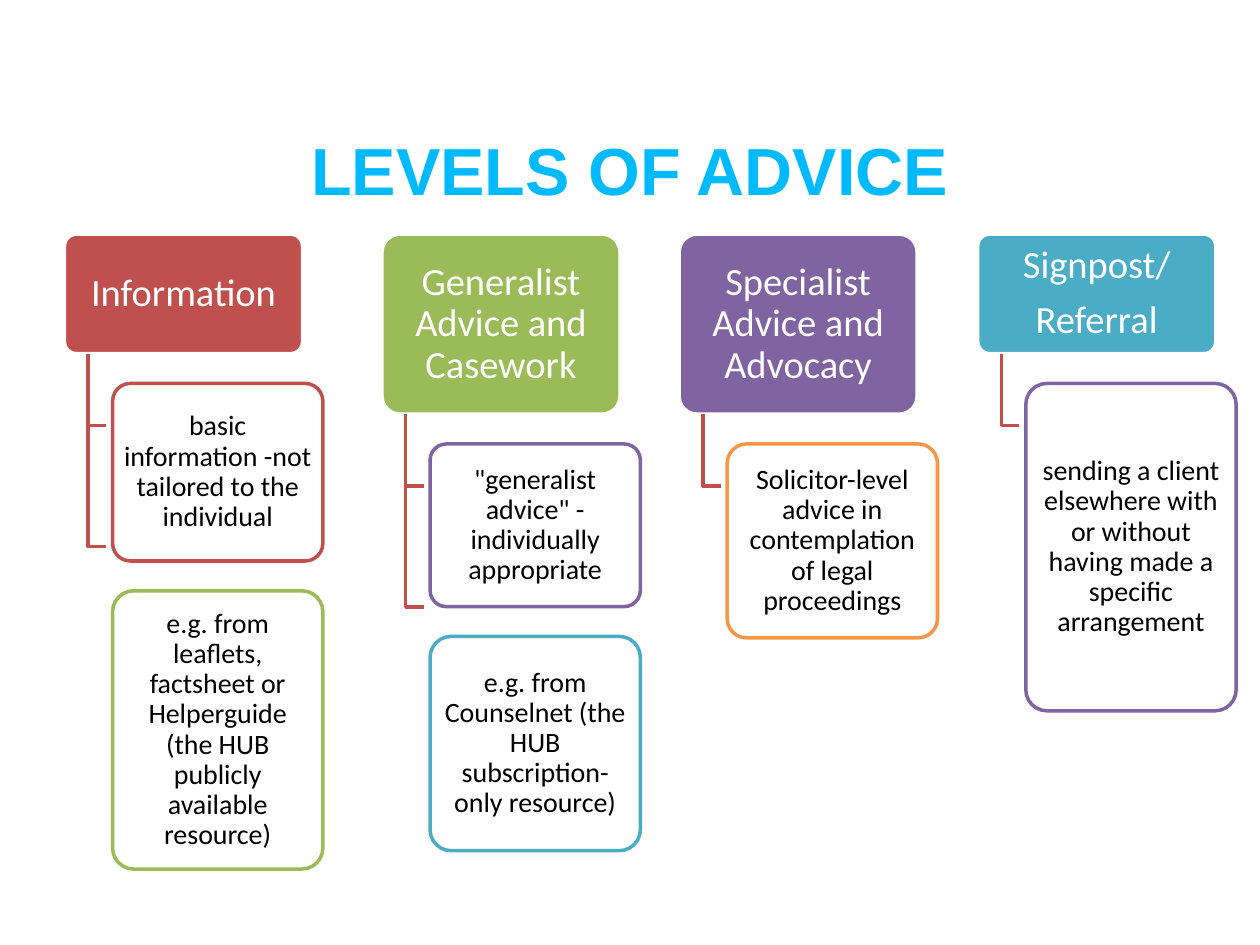
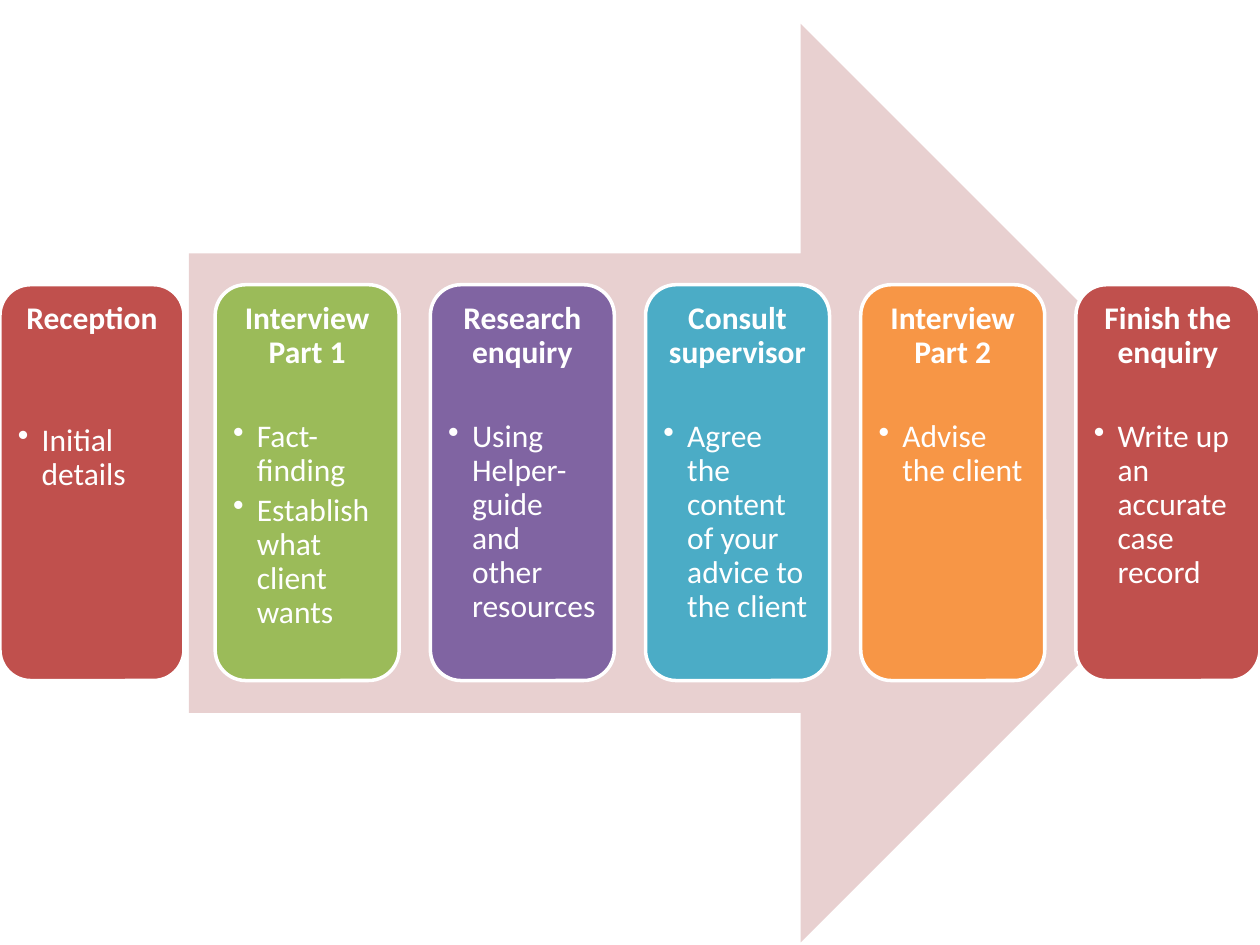
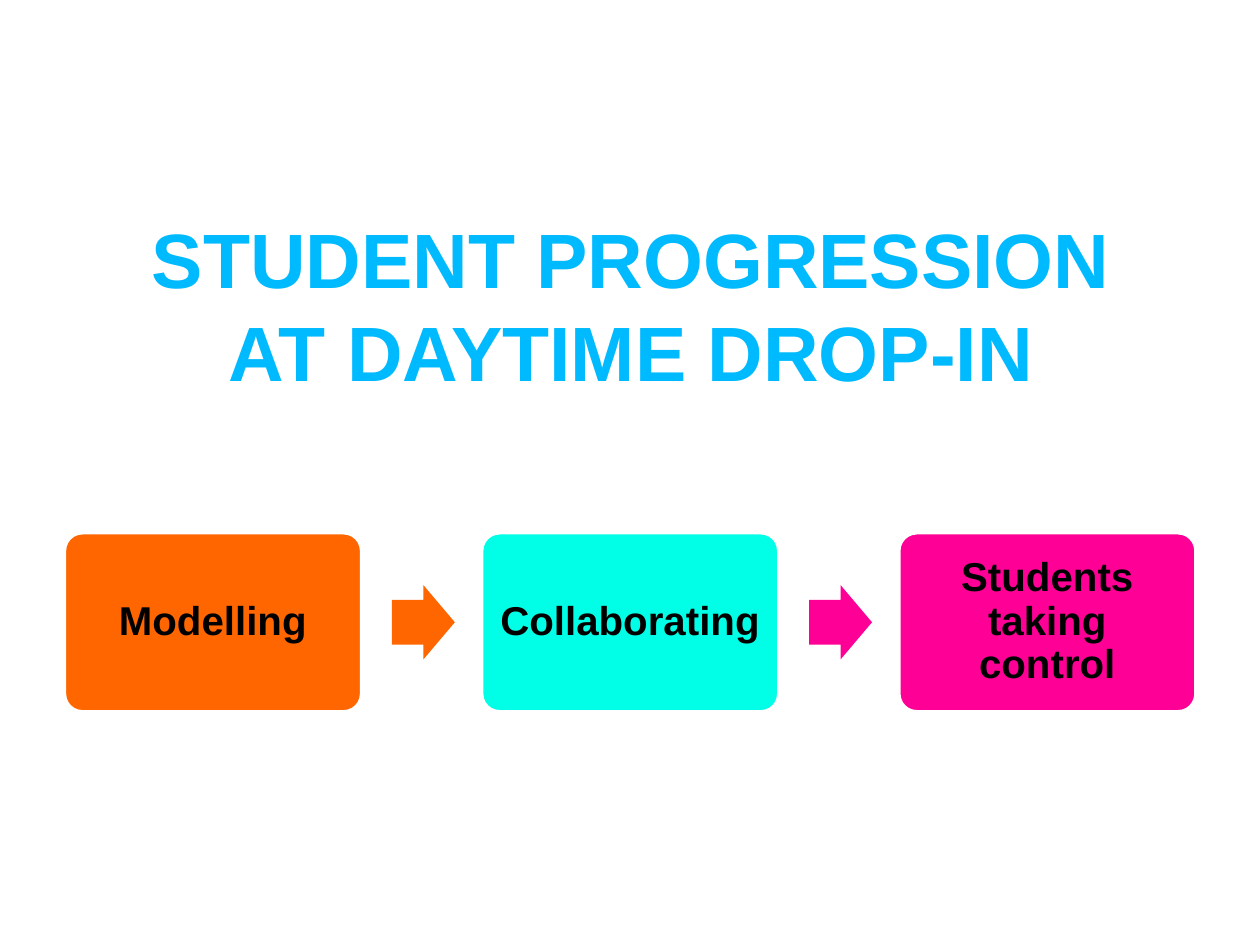
from dataclasses import dataclass
from lxml.etree import SubElement
from pptx import Presentation
from pptx.dml.color import RGBColor
from pptx.enum.shapes import MSO_SHAPE
from pptx.enum.text import MSO_ANCHOR, MSO_AUTO_SIZE, PP_ALIGN
from pptx.oxml.ns import qn
from pptx.util import Cm, Pt


@dataclass(frozen=True)
class Theme:
    red: str = "C0504D"
    green: str = "9BBB59"
    purple: str = "8064A2"
    teal: str = "4BACC6"
    amber: str = "F79646"
    rose: str = "E8D0D0"
    orange: str = "FF6600"
    aqua: str = "00FFE6"
    pink: str = "FF0097"
    sky: str = "00BAFF"
    white: str = "FFFFFF"
    black: str = "000000"
    head: str = "Arial"
    body: str = "Calibri"
    level: int = 22
    note: int = 16
    step: int = 18
    stage: int = 23
    line: int = 2


T = Theme()
WIDTH, HEIGHT = 25.4, 19.05

# left, header height, colour, header lines, notes as (text, colour, height)
LEVELS = [
    (1.3, 2.41, T.red, ["Information"], [
        ("basic information -not tailored to the individual", T.red, 3.58),
        ("e.g. from leaflets, factsheet or Helperguide (the HUB publicly "
         "available resource)", T.green, 5.61)]),
    (7.7, 3.63, T.green, ["Generalist Advice and Casework"], [
        ('"generalist advice" - individually appropriate', T.purple, 3.28),
        ("e.g. from Counselnet (the HUB subscription-only resource)",
         T.teal, 4.32)]),
    (13.69, 3.63, T.purple, ["Specialist Advice and Advocacy"], [
        ("Solicitor-level advice in contemplation of legal proceedings",
         T.amber, 3.91)]),
    (19.71, 2.41, T.teal, ["Signpost/", "Referral"], [
        ("sending a client elsewhere with or without having made a specific "
         "arrangement", T.purple, 6.6)]),
]

# heading, colour, points between heading and bullets, bullets
STEPS = [
    ("Reception", T.red, 50, ["Initial details"]),
    ("Interview Part 1", T.green, 28.5,
     ["Fact-finding", "Establish what client wants"]),
    ("Research enquiry", T.purple, 28.5,
     ["Using Helper-guide and other resources"]),
    ("Consult supervisor", T.teal, 28.5,
     ["Agree the content of your advice to the client"]),
    ("Interview Part 2", T.amber, 28.5, ["Advise the client"]),
    ("Finish the enquiry", T.red, 28.5, ["Write up an accurate case record"]),
]

STAGES = [
    ("Modelling", T.orange),
    ("Collaborating", T.aqua),
    ("Students taking\vcontrol", T.pink),
]


def rgb(code):
    return RGBColor.from_string(code)


def write(shape, text, size=T.step, color=T.white, font=T.body, bold=False,
          align=PP_ALIGN.CENTER, lead=0.9, gap=0, bullet=False):
    """Add one paragraph to a shape; gap is the space before it in points."""
    frame = shape.text_frame
    para = frame.add_paragraph() if frame.text else frame.paragraphs[0]
    para.text = text
    if bullet:
        props = para._p.get_or_add_pPr()
        props.set("marL", str(Cm(0.48)))
        props.set("indent", str(-Cm(0.48)))
        SubElement(props, qn("a:buChar")).set("char", "•")
    para.alignment = align
    para.line_spacing = lead
    if gap:
        para.space_before = Pt(gap)
    for run in para.runs:
        run.font.size, run.font.bold, run.font.name = Pt(size), bold, font
        run.font.color.rgb = rgb(color)


def draw(slide, kind, box, fill, line=None, adjust=(), pad=(0, 0),
         anchor=MSO_ANCHOR.MIDDLE):
    shape = slide.shapes.add_shape(kind, *map(Cm, box))
    shape.shadow.inherit = False
    for i, value in enumerate(adjust):
        shape.adjustments[i] = value
    shape.fill.solid()
    shape.fill.fore_color.rgb = rgb(fill)
    if line:
        shape.line.color.rgb = rgb(line)
        shape.line.width = Pt(T.line)
    else:
        shape.line.fill.background()
    frame = shape.text_frame
    frame.word_wrap = True
    frame.vertical_anchor = anchor
    frame.margin_left = frame.margin_right = Cm(pad[0])
    frame.margin_top = frame.margin_bottom = Cm(pad[1])
    return shape


def card(slide, box, fill, line=T.white, adjust=(0.1,), **more):
    return draw(slide, MSO_SHAPE.ROUNDED_RECTANGLE, box, fill, line, adjust,
                **more)


def elbow(slide, x, y, drop):
    """Draw a branch that falls from a header and turns right to a note."""
    path = slide.shapes.build_freeform(Cm(x), Cm(y))
    path.add_line_segments([(Cm(x), Cm(y + drop)),
                            (Cm(x + 0.36), Cm(y + drop))], close=False)
    branch = path.convert_to_shape()
    branch.shadow.inherit = False
    branch.fill.background()
    branch.line.color.rgb = rgb(T.red)
    branch.line.width = Pt(T.line)


def head(slide, text, box, size):
    title = slide.shapes.title
    title.left, title.top, title.width, title.height = map(Cm, box)
    title.text_frame.auto_size = MSO_AUTO_SIZE.NONE
    title.text_frame.vertical_anchor = MSO_ANCHOR.MIDDLE
    write(title, text, size, T.sky, T.head, True, lead=1.0)


def levels(slide):
    head(slide, "LEVELS OF ADVICE", (0, 2.13, WIDTH, 2.57), 38)
    top, gap = 4.72, 0.6
    for left, high, color, lines, notes in LEVELS:
        box = card(slide, (left, top, 4.8, high), color, pad=(0.13, 0.08))
        for i, text in enumerate(lines):
            write(box, text, T.level, gap=7.7 * (i > 0))
        base = top + high
        y = base + gap
        for i, (text, edge, tall) in enumerate(notes):
            elbow(slide, left + 0.48, base, 1.45 + 2.44 * i)
            note = card(slide, (left + 0.97, y, 4.24, tall), T.white, edge,
                        pad=(0.08, 0.05))
            write(note, text, T.note, T.black)
            y += tall + gap


def steps(slide):
    draw(slide, MSO_SHAPE.RIGHT_ARROW, (3.81, 0.48, 21.59, 18.52), T.rose)
    wide = 3.71
    pitch = (WIDTH - wide) / (len(STEPS) - 1)
    for i, (name, color, space, items) in enumerate(STEPS):
        box = card(slide, (i * pitch, 5.74, wide, 7.98), color, adjust=(),
                   pad=(0.18, 0.18), anchor=MSO_ANCHOR.TOP)
        write(box, name, bold=True)
        for j, item in enumerate(items):
            write(box, item, align=PP_ALIGN.LEFT, gap=3 if j else space,
                  bullet=True)


def stages(slide):
    head(slide, "STUDENT PROGRESSION\vAT DAYTIME DROP-IN",
         (1.3, 3.53, 22.86, 5.21), 44)
    left, top, wide, high, pitch = 1.3, 10.74, 5.99, 3.61, 8.41
    # each arrow takes the colour of the stage at the outer end
    arrows = [T.orange, T.pink]
    for i, (name, color) in enumerate(STAGES):
        x = left + i * pitch
        box = card(slide, (x, top, wide, high), color, pad=(0.25, 0.25))
        write(box, name, T.stage, T.black, T.head, True)
        if i < len(arrows):
            draw(slide, MSO_SHAPE.RIGHT_ARROW,
                 (x + wide + 0.61, top + (high - 1.5) / 2, 1.27, 1.5),
                 arrows[i], adjust=(0.6, 0.5))


def main():
    deck = Presentation()
    deck.slide_width, deck.slide_height = Cm(WIDTH), Cm(HEIGHT)
    titled, blank = deck.slide_layouts[5], deck.slide_layouts[6]
    for build, layout in ((levels, titled), (steps, blank), (stages, titled)):
        build(deck.slides.add_slide(layout))
    deck.save("out.pptx")


if __name__ == "__main__":
    main()
